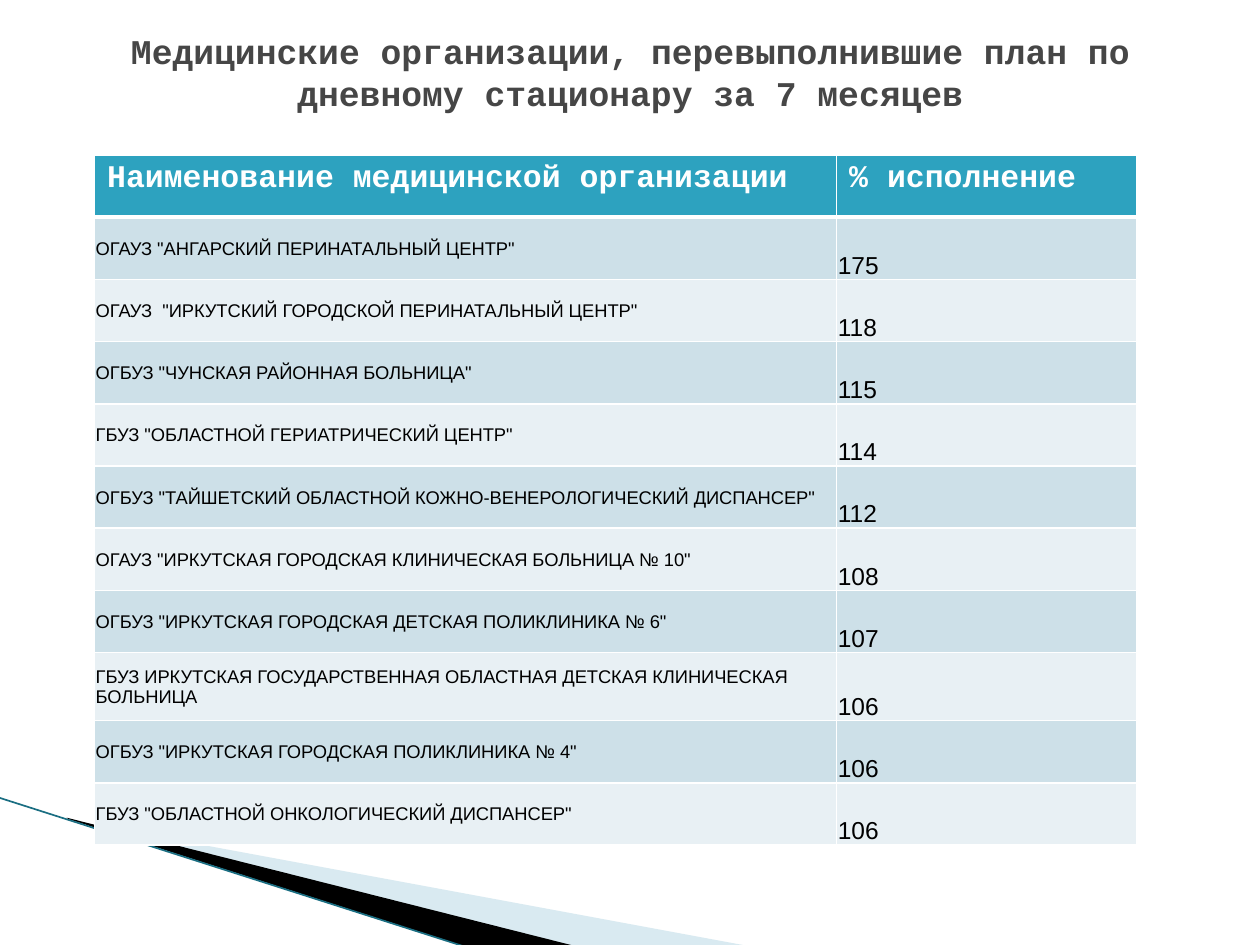
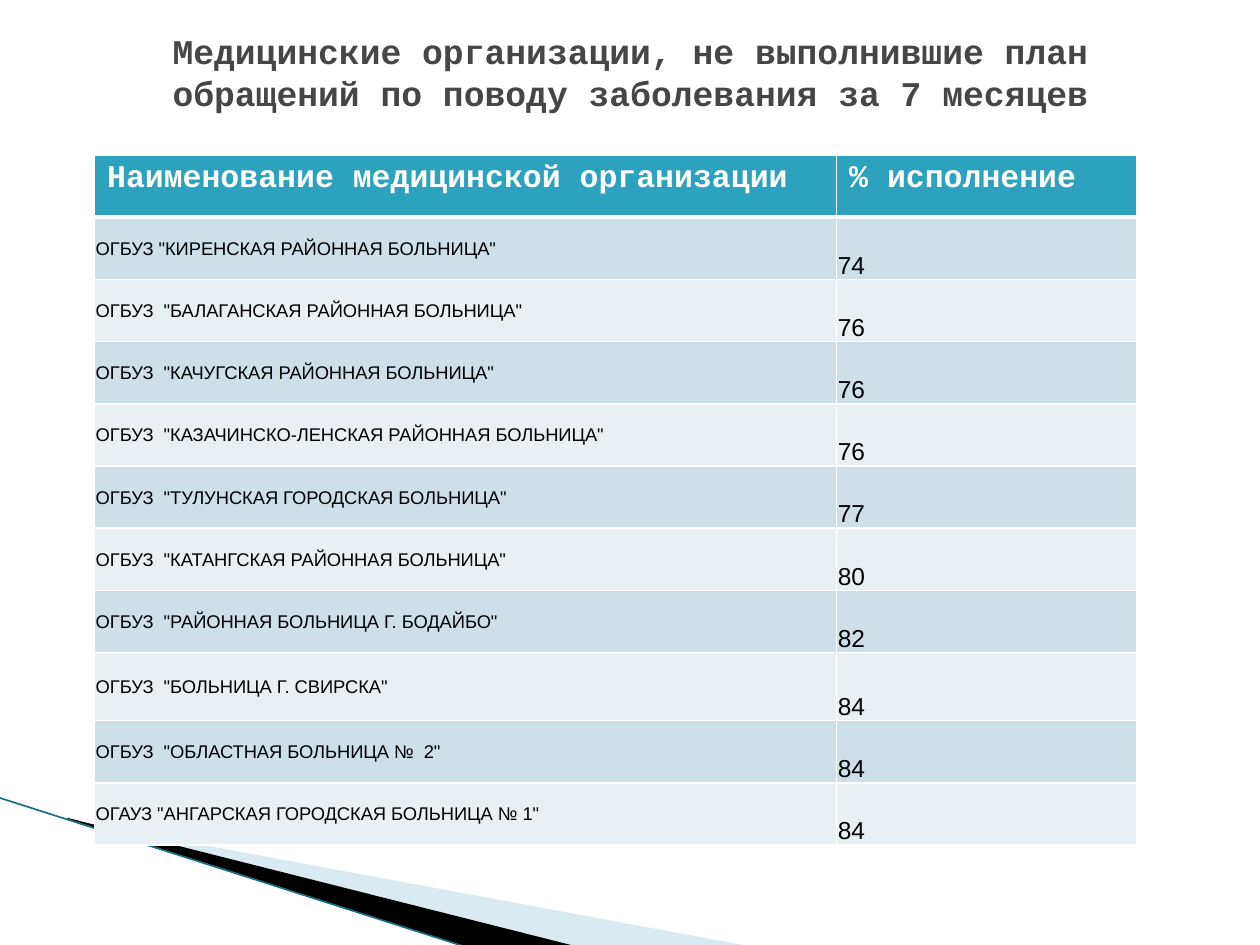
from lxml import etree
from pptx import Presentation
from pptx.dml.color import RGBColor
from pptx.enum.shapes import MSO_CONNECTOR
from pptx.enum.text import MSO_ANCHOR, PP_ALIGN
from pptx.oxml.ns import qn
from pptx.util import Inches, Pt

STRAIGHT = MSO_CONNECTOR.STRAIGHT
TOP, MIDDLE, BOTTOM = MSO_ANCHOR.TOP, MSO_ANCHOR.MIDDLE, MSO_ANCHOR.BOTTOM
CENTER = PP_ALIGN.CENTER

COLORS = {
    "title": "464646", "header": "2DA2BF", "odd_row": "CDE0E8", "even_row": "E8F0F4",
    "white": "FFFFFF", "black": "000000", "wedge": "A0CBDC", "edge": "1A6E82",
}
TITLE_FONT = {"name": "Courier New", "size": Pt(19.8), "bold": True}
HEADER_FONT = {"name": "Courier New", "size": Pt(18), "bold": True}
NAME_FONT = {"name": "Arial", "size": Pt(10.5), "bold": False}
PERCENT_FONT = {"name": "Arial", "size": Pt(14), "bold": False}
CELL_MARGINS = {
    "margin_left": Inches(0.01), "margin_top": Inches(0.01),
    "margin_right": Inches(0.01), "margin_bottom": 0,
}

TITLE_BOX = (0.5, 0.3, 9, 0.54)
TABLE_BOX = (0.75, 1.23, 8.27, 5.48)
CORNER_BOX = (0, 6.33, 5.95, 1.18)
NAME_WIDTH = 5.89
TALL_ROW, TALL_HEIGHT = 8, 0.54
HEADINGS = ("Наименование медицинской организации", "% исполнение")

SLIDES = [
    ("Медицинские организации, перевыполнившие план по дневному стационару за 7 месяцев", [
        ('ОГАУЗ "АНГАРСКИЙ ПЕРИНАТАЛЬНЫЙ ЦЕНТР"', 175),
        ('ОГАУЗ  "ИРКУТСКИЙ ГОРОДСКОЙ ПЕРИНАТАЛЬНЫЙ ЦЕНТР"', 118),
        ('ОГБУЗ "ЧУНСКАЯ РАЙОННАЯ БОЛЬНИЦА"', 115),
        ('ГБУЗ "ОБЛАСТНОЙ ГЕРИАТРИЧЕСКИЙ ЦЕНТР"', 114),
        ('ОГБУЗ "ТАЙШЕТСКИЙ ОБЛАСТНОЙ КОЖНО-ВЕНЕРОЛОГИЧЕСКИЙ ДИСПАНСЕР"', 112),
        ('ОГАУЗ "ИРКУТСКАЯ ГОРОДСКАЯ КЛИНИЧЕСКАЯ БОЛЬНИЦА № 10"', 108),
        ('ОГБУЗ "ИРКУТСКАЯ ГОРОДСКАЯ ДЕТСКАЯ ПОЛИКЛИНИКА № 6"', 107),
        ("ГБУЗ ИРКУТСКАЯ ГОСУДАРСТВЕННАЯ ОБЛАСТНАЯ ДЕТСКАЯ КЛИНИЧЕСКАЯ БОЛЬНИЦА", 106),
        ('ОГБУЗ "ИРКУТСКАЯ ГОРОДСКАЯ ПОЛИКЛИНИКА № 4"', 106),
        ('ГБУЗ "ОБЛАСТНОЙ ОНКОЛОГИЧЕСКИЙ ДИСПАНСЕР"', 106),
    ]),
    ("Медицинские организации, не выполнившие план обращений по поводу заболевания за 7 месяцев", [
        ('ОГБУЗ "КИРЕНСКАЯ РАЙОННАЯ БОЛЬНИЦА"', 74),
        ('ОГБУЗ  "БАЛАГАНСКАЯ РАЙОННАЯ БОЛЬНИЦА"', 76),
        ('ОГБУЗ  "КАЧУГСКАЯ РАЙОННАЯ БОЛЬНИЦА"', 76),
        ('ОГБУЗ  "КАЗАЧИНСКО-ЛЕНСКАЯ РАЙОННАЯ БОЛЬНИЦА"', 76),
        ('ОГБУЗ  "ТУЛУНСКАЯ ГОРОДСКАЯ БОЛЬНИЦА"', 77),
        ('ОГБУЗ  "КАТАНГСКАЯ РАЙОННАЯ БОЛЬНИЦА"', 80),
        ('ОГБУЗ  "РАЙОННАЯ БОЛЬНИЦА Г. БОДАЙБО"', 82),
        ('ОГБУЗ  "БОЛЬНИЦА Г. СВИРСКА"', 84),
        ('ОГБУЗ  "ОБЛАСТНАЯ БОЛЬНИЦА №  2"', 84),
        ('ОГАУЗ "АНГАРСКАЯ ГОРОДСКАЯ БОЛЬНИЦА № 1"', 84),
    ]),
]


def rgb(key):
    return RGBColor.from_string(COLORS[key])


def apply(target, values):
    for attribute, value in values.items():
        setattr(target, attribute, value)


def write(frame, text, font, color):
    paragraph = frame.paragraphs[0]
    paragraph.text = text
    apply(paragraph.font, font)
    paragraph.font.color.rgb = rgb(color)
    return paragraph


def add_title(slide, box, text):
    title = slide.shapes.title
    apply(title, dict(zip(("left", "top", "width", "height"), map(Inches, box))))
    apply(title.text_frame, {"word_wrap": True, "vertical_anchor": MIDDLE})
    write(title.text_frame, text, TITLE_FONT, "title").alignment = CENTER


def add_wedge(slide, points, color, opacity=100):
    corners = [(Inches(x), Inches(y)) for x, y in points]
    builder = slide.shapes.build_freeform(*corners[0])
    builder.add_line_segments(corners[1:])
    wedge = builder.convert_to_shape()
    wedge.shadow.inherit = False
    wedge.fill.solid()
    wedge.fill.fore_color.rgb = rgb(color)
    wedge.line.fill.background()
    if opacity < 100:
        srgb = wedge.fill._xPr.find(".//" + qn("a:srgbClr"))
        etree.SubElement(srgb, qn("a:alpha"), val=str(opacity * 1000))


def add_corner(slide, box):
    """Slanted bands in the lower left corner."""
    left, top = box[:2]

    def place(*points):
        return [(left + x, top + y) for x, y in points]

    add_wedge(slide, place((0.55, 0.18), (5.95, 1.18), (4.56, 1.18), (0.55, 0.17)), "wedge", 40)
    add_wedge(slide, place((0.53, 0.16), (4.57, 1.18), (3.72, 1.19), (0.54, 0.17)), "black")
    start, end = place((-0.01, 0), (3.71, 1.19))
    edge = slide.shapes.add_connector(STRAIGHT, *map(Inches, start + end))
    edge.line.color.rgb = rgb("edge")
    edge.line.width = Pt(0.95)
    etree.SubElement(edge._element.spPr, qn("a:effectLst"))


def set_borders(cell, **widths):
    properties = cell._tc.get_or_add_tcPr()
    for side in "LRTB":
        line = etree.SubElement(properties, qn("a:ln" + side), w=str(Pt(widths.get(side, 1))))
        fill = etree.SubElement(line, qn("a:solidFill"))
        etree.SubElement(fill, qn("a:srgbClr"), val=COLORS["white"])


def fill_cell(cell, text, font, color, background, anchor, **borders):
    set_borders(cell, **borders)
    cell.fill.solid()
    cell.fill.fore_color.rgb = rgb(background)
    cell.vertical_anchor = anchor
    write(cell.text_frame, text, font, color)


def add_results(slide, box, results):
    """Table of organisations and their percentages."""
    left, top, width, height = box
    count = len(results) + 1
    table = slide.shapes.add_table(count, 2, *map(Inches, box)).table
    for column, column_width in zip(table.columns, (NAME_WIDTH, width - NAME_WIDTH)):
        column.width = Inches(column_width)
    row_height = (height - TALL_HEIGHT) / (count - 1)
    for index, row in enumerate(table.rows):
        row.height = Inches(TALL_HEIGHT if index == TALL_ROW else row_height)

    for column, heading in enumerate(HEADINGS):
        fill_cell(table.cell(0, column), heading, HEADER_FONT, "white", "header", TOP, B=3)
    for index, (name, percent) in enumerate(results, 1):
        background = "odd_row" if index % 2 else "even_row"
        parts = ((name, NAME_FONT, MIDDLE), (str(percent), PERCENT_FONT, BOTTOM))
        for column, (text, font, anchor) in enumerate(parts):
            cell = table.cell(index, column)
            apply(cell, CELL_MARGINS)
            fill_cell(cell, text, font, "black", background, anchor, T=3 if index == 1 else 1)


def add_results_slide(deck, title, results):
    slide = deck.slides.add_slide(deck.slide_layouts.get_by_name("Title Only"))
    add_corner(slide, CORNER_BOX)
    add_title(slide, TITLE_BOX, title)
    add_results(slide, TABLE_BOX, results)


def main():
    deck = Presentation()
    deck.slide_width, deck.slide_height = Inches(10), Inches(7.5)
    for title, results in SLIDES:
        add_results_slide(deck, title, results)
    deck.save("out.pptx")


if __name__ == "__main__":
    main()
